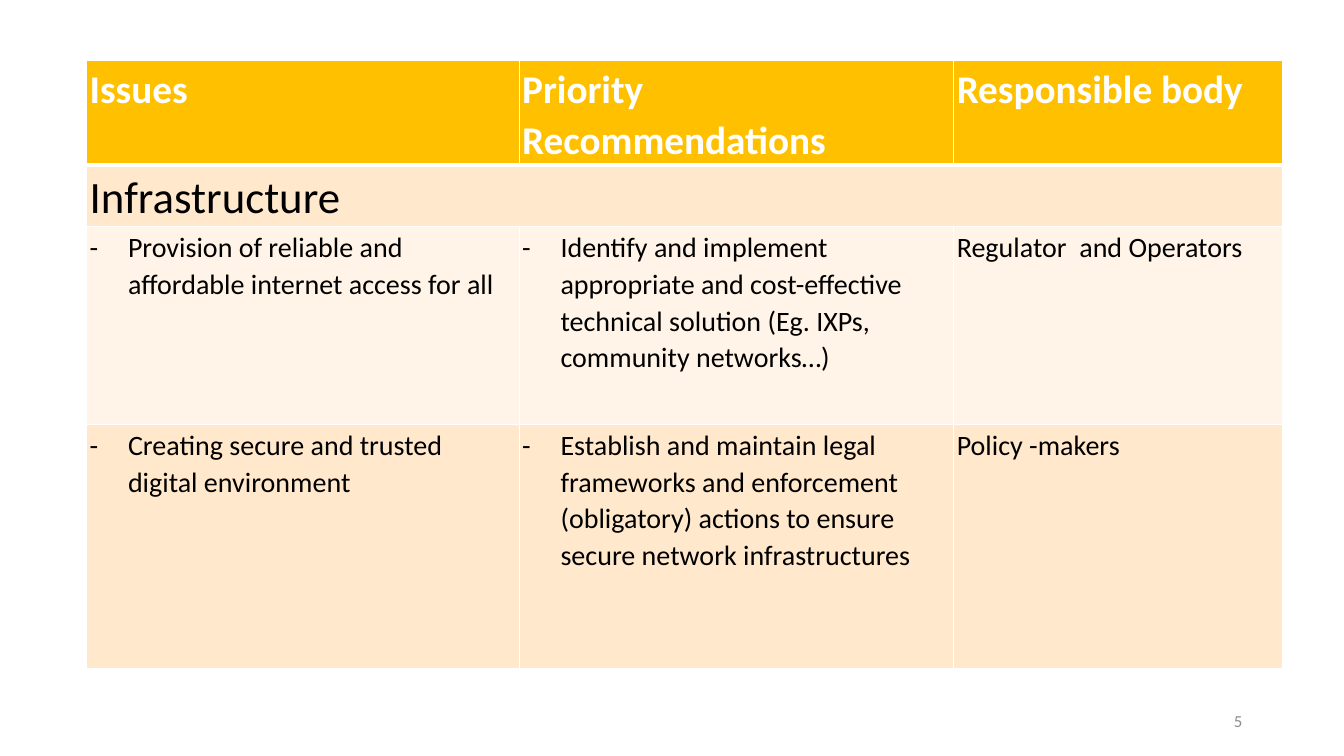
from lxml import etree
from pptx import Presentation
from pptx.dml.color import RGBColor
from pptx.enum.text import MSO_ANCHOR, PP_ALIGN
from pptx.oxml.ns import qn
from pptx.util import Inches, Pt

RIGHT = PP_ALIGN.RIGHT
MIDDLE = MSO_ANCHOR.MIDDLE
BLANK_LAYOUT = 6
FONT = "Calibri"
COLOURS = {
    "white": "FFFFFF",
    "black": "000000",
    "header": "FFC000",
    "dark_band": "FFE8CC",
    "light_band": "FFF4E7",
    "number": "8C8C8C",
}
HEADER = {"size": Pt(28), "bold": True}
SECTION = {"size": Pt(32), "bold": False}
BODY = {"size": Pt(20), "bold": False}
CELL_MARGINS = {
    "margin_left": Inches(0.03),
    "margin_right": Inches(0.03),
    "margin_top": Inches(0.02),
    "margin_bottom": Inches(0.02),
}
COLUMN_WIDTHS = [4.29, 4.31, 3.26]
ROWS = [
    {
        "height": 1.04, "fill": "header", "colour": "white", "font": HEADER,
        "texts": ["Issues", "Priority Recommendations", "Responsible body"],
        "bulleted": 0, "top": 1, "bottom": 3,
    },
    {
        "height": 0.59, "fill": "dark_band", "colour": "black", "font": SECTION,
        "texts": ["Infrastructure", "", ""],
        "bulleted": 0, "top": 3, "bottom": 1,
    },
    {
        "height": 1.96, "fill": "light_band", "colour": "black", "font": BODY,
        "texts": [
            "Provision of reliable and affordable internet access for all",
            "Identify and implement appropriate and cost-effective technical "
            "solution (Eg. IXPs, community networks…)",
            "Regulator  and Operators",
        ],
        "bulleted": 2, "top": 1, "bottom": 1,
    },
    {
        "height": 2.42, "fill": "dark_band", "colour": "black", "font": BODY,
        "texts": [
            "Creating secure and trusted digital environment",
            "Establish and maintain legal frameworks and enforcement "
            "(obligatory) actions to ensure secure network infrastructures",
            "Policy -makers",
        ],
        "bulleted": 2, "top": 1, "bottom": 1,
    },
]


def colour(name):
    return RGBColor.from_string(COLOURS[name])


def set_attributes(target, values):
    for name, value in values.items():
        setattr(target, name, value)


def format_font(font, values, colour_name):
    set_attributes(font, {"name": FONT, **values})
    font.color.rgb = colour(colour_name)


def add_dash_bullet(paragraph):
    properties = paragraph._p.get_or_add_pPr()
    properties.set("marL", str(Inches(0.38)))
    properties.set("indent", str(Inches(-0.38)))
    etree.SubElement(properties, qn("a:buFont"), typeface=FONT)
    etree.SubElement(properties, qn("a:buChar"), char="-")


def set_borders(cell, top, bottom):
    properties = cell._tc.get_or_add_tcPr()
    widths = {"lnL": 1, "lnR": 1, "lnT": top, "lnB": bottom}
    for position, (side, width) in enumerate(widths.items()):
        line = etree.Element(qn(f"a:{side}"), w=str(Pt(width)))
        fill = etree.SubElement(line, qn("a:solidFill"))
        etree.SubElement(fill, qn("a:srgbClr"), val=COLOURS["white"])
        properties.insert(position, line)


def fill_cell(cell, text, row, bulleted):
    set_attributes(cell, CELL_MARGINS)
    cell.fill.solid()
    cell.fill.fore_color.rgb = colour(row["fill"])
    set_borders(cell, row["top"], row["bottom"])
    if not text:
        return
    paragraph = cell.text_frame.paragraphs[0]
    paragraph.line_spacing = 1.07
    if bulleted:
        add_dash_bullet(paragraph)
    run = paragraph.add_run()
    run.text = text
    format_font(run.font, row["font"], row["colour"])


def add_recommendations_table(slide):
    shape = slide.shapes.add_table(
        len(ROWS), len(COLUMN_WIDTHS),
        Inches(0.86), Inches(0.6), Inches(11.86), Inches(6.01),
    )
    table = shape.table
    for column, width in zip(table.columns, COLUMN_WIDTHS):
        column.width = Inches(width)
    for row_index, row in enumerate(ROWS):
        table.rows[row_index].height = Inches(row["height"])
        for column_index, text in enumerate(row["texts"]):
            cell = table.cell(row_index, column_index)
            fill_cell(cell, text, row, column_index < row["bulleted"])
    table.cell(1, 0).merge(table.cell(1, 2))


def add_slide_number(slide, number):
    shape = slide.shapes.add_textbox(
        Inches(9.42), Inches(6.95), Inches(3), Inches(0.4)
    )
    frame = shape.text_frame
    set_attributes(frame, {"word_wrap": True, "vertical_anchor": MIDDLE})
    paragraph = frame.paragraphs[0]
    paragraph.alignment = RIGHT
    run = paragraph.add_run()
    run.text = number
    format_font(run.font, {"size": Pt(12)}, "number")


def main():
    presentation = Presentation()
    presentation.slide_width = Inches(13.33)
    presentation.slide_height = Inches(7.5)
    slide = presentation.slides.add_slide(
        presentation.slide_layouts[BLANK_LAYOUT]
    )
    add_slide_number(slide, "5")
    add_recommendations_table(slide)
    presentation.save("out.pptx")


if __name__ == "__main__":
    main()
